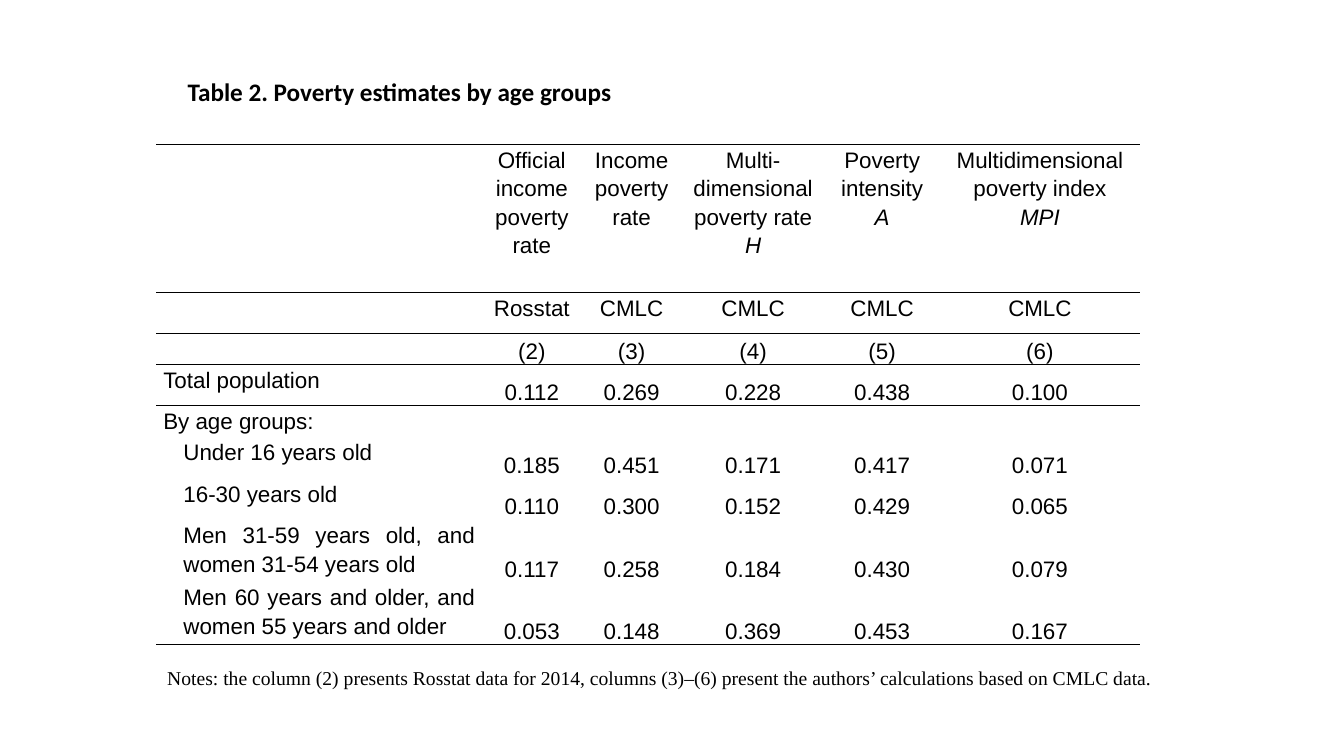
from lxml import etree
from pptx import Presentation
from pptx.dml.color import RGBColor
from pptx.enum import text as t
from pptx.oxml import ns
from pptx.util import Inches, Pt

TITLE = "Table 2. Poverty estimates by age groups"
NOTE = ("Notes: the column (2) presents Rosstat data for 2014, columns (3)–(6) "
        "present the authors’ calculations based on CMLC data.")
# Each heading: wording, then the symbol set in italics below it
HEADS = [
    ("Official income poverty rate", ""),
    ("Income poverty rate", ""),
    ("Multi-dimensional poverty rate", "H"),
    ("Poverty intensity", "A"),
    ("Multidimensional poverty index", "MPI"),
]
BODY = [
    ["", "Rosstat", "CMLC", "CMLC", "CMLC", "CMLC"],
    ["", "(2)", "(3)", "(4)", "(5)", "(6)"],
    ["Total population", "0.112", "0.269", "0.228", "0.438", "0.100"],
    ["By age groups:", "", "", "", "", ""],
    ["Under 16 years old", "0.185", "0.451", "0.171", "0.417", "0.071"],
    ["16-30 years old", "0.110", "0.300", "0.152", "0.429", "0.065"],
    ["Men 31-59 years old, and women 31-54 years old",
     "0.117", "0.258", "0.184", "0.430", "0.079"],
    ["Men 60 years and older, and women 55 years and older",
     "0.053", "0.148", "0.369", "0.453", "0.167"],
]
WIDTHS = [3.23, 0.99, 0.99, 1.42, 1.14, 1.99]
HEIGHTS = [1.47, 0.41, 0.3, 0.41, 0.31, 0.41, 0.41, 0.62, 0.62]
RULES = {0, 1, 2, 3, len(HEIGHTS)}  # row edges that carry a line
NUMBERS = 2   # row of column numbers; cells from here on sit at the bottom
GROUPS = 5    # first row of the indented age groups
COLORS = {"ink": "000000"}
PLAIN = "{2D5ABB26-0587-4C30-8999-92F81FD0307C}"  # table style without grid


def style(par, face, size, align, bold=False, italic=False):
    font = par.font
    font.name, font.size = face, Pt(size)
    font.bold, font.italic = bold, italic
    font.color.rgb = RGBColor.from_string(COLORS["ink"])
    par.alignment = align


def place(shape, left, top, width, height):
    shape.left, shape.top = Inches(left), Inches(top)
    shape.width, shape.height = Inches(width), Inches(height)


def rule(cell, side):
    line = etree.SubElement(cell._tc.get_or_add_tcPr(), ns.qn("a:" + side), w=str(Pt(1)))
    fill = etree.SubElement(line, ns.qn("a:solidFill"))
    etree.SubElement(fill, ns.qn("a:srgbClr"), val=COLORS["ink"])


def fill_cell(cell, row, col, lines):
    cell.margin_left = cell.margin_right = Inches(0.07)
    cell.margin_top = cell.margin_bottom = 0
    low = row >= NUMBERS and col > 0
    cell.vertical_anchor = t.MSO_ANCHOR.BOTTOM if low else t.MSO_ANCHOR.TOP
    for side, edge in (("lnT", row), ("lnB", row + 1)):
        if edge in RULES:
            rule(cell, side)
    cell.fill.background()
    frame = cell.text_frame
    align = t.PP_ALIGN.CENTER if col else t.PP_ALIGN.JUSTIFY
    for i, words in enumerate(filter(None, lines)):
        par = frame.add_paragraph() if i else frame.paragraphs[0]
        par.text = words
        style(par, "Arial", 16, align, italic=i > 0)
        par.line_spacing = 1.15
        if row >= GROUPS and col == 0:
            par._p.get_or_add_pPr().set("marL", str(Inches(0.2)))


def add_grid(slide):
    rows = [[("",)] + HEADS] + [[(words,) for words in row] for row in BODY]
    frame = slide.shapes.add_table(
        len(HEIGHTS), len(WIDTHS), Inches(1.55), Inches(1.43),
        Inches(sum(WIDTHS)), Inches(sum(HEIGHTS)))
    grid = frame.table
    grid.first_row = grid.horz_banding = False
    grid._tbl.tblPr.find(ns.qn("a:tableStyleId")).text = PLAIN
    for col, width in zip(grid.columns, WIDTHS):
        col.width = Inches(width)
    for row, height in zip(grid.rows, HEIGHTS):
        row.height = Inches(height)
    for r, row in enumerate(rows):
        for c, lines in enumerate(row):
            fill_cell(grid.cell(r, c), r, c, lines)


def main():
    deck = Presentation()
    deck.slide_width, deck.slide_height = Inches(13.33), Inches(7.5)
    slide = deck.slides.add_slide(deck.slide_layouts[5])

    title = slide.shapes.title
    place(title, 1.76, 0.71, 9.61, 0.4)
    frame = title.text_frame
    frame.text = TITLE
    frame.auto_size = t.MSO_AUTO_SIZE.NONE
    frame.vertical_anchor = t.MSO_ANCHOR.TOP
    style(frame.paragraphs[0], "Calibri", 18, t.PP_ALIGN.LEFT, bold=True)

    add_grid(slide)

    note = slide.shapes.add_textbox(0, 0, 0, 0)
    place(note, 1.56, 6.55, 10.13, 0.34)
    frame = note.text_frame
    frame.text = NOTE
    frame.word_wrap = False
    frame.vertical_anchor = t.MSO_ANCHOR.MIDDLE
    style(frame.paragraphs[0], "Times New Roman", 14, t.PP_ALIGN.LEFT)

    deck.save("out.pptx")


if __name__ == "__main__":
    main()
